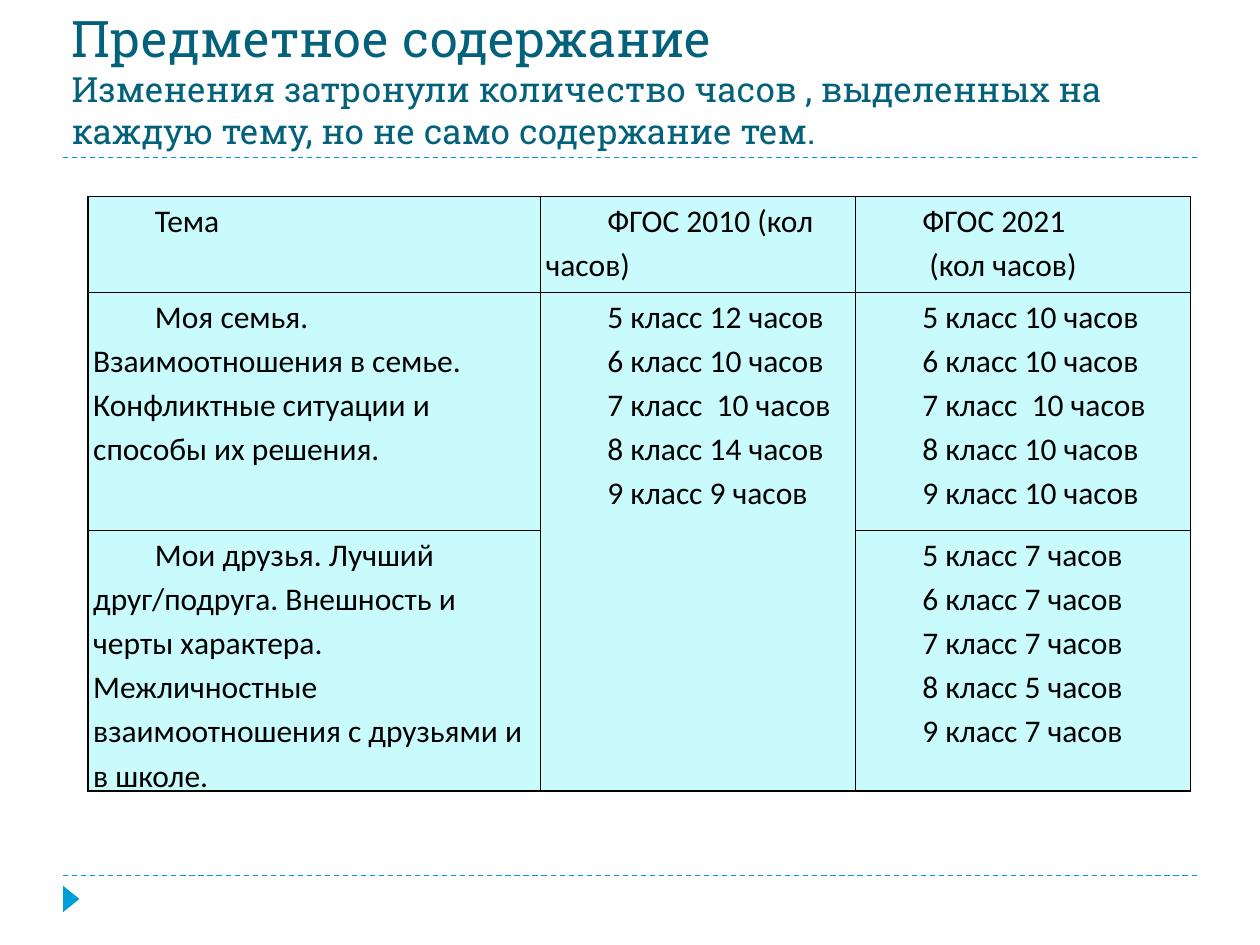
"""Builds a slide that compares lesson hours per topic under two standards."""
from dataclasses import dataclass

from lxml import etree
from pptx import Presentation, util as u
from pptx.dml.color import RGBColor
from pptx.enum import dml, shapes, text
from pptx.oxml import ns


@dataclass(frozen=True)
class Theme:
    """Holds the colours, fonts and type sizes."""
    title: RGBColor = RGBColor(0x04, 0x61, 0x7B)
    accent: RGBColor = RGBColor(0x00, 0x9D, 0xD9)
    cell: RGBColor = RGBColor(0xC9, 0xFA, 0xFC)
    ink: RGBColor = RGBColor(0, 0, 0)
    head: str = "Roboto Slab"
    body: str = "Calibri"
    big: float = 28.8
    mid: float = 19.8
    small: float = 18


THEME = Theme()
TITLE = "Предметное содержание"
NOTE = ("Изменения затронули количество часов , выделенных на каждую тему, "
        "но не само содержание тем.")
COLS = (3.59, 2.5, 2.66)
ROWS = (0.76, 1.89, 1.89)
FAMILY = "Моя семья. Взаимоотношения в семье. Конфликтные ситуации и способы их решения."
FRIENDS = ("Мои друзья. Лучший друг/подруга. Внешность и черты характера. "
           "Межличностные взаимоотношения с друзьями и в школе.")
CELLS = (
    (["Тема"], ["ФГОС 2010 (кол часов)"], ["ФГОС 2021", " (кол часов)"]),
    ([FAMILY],
     ["5 класс 12 часов", "6 класс 10 часов", "7 класс  10 часов",
      "8 класс 14 часов", "9 класс 9 часов"],
     ["5 класс 10 часов", "6 класс 10 часов", "7 класс  10 часов",
      "8 класс 10 часов", "9 класс 10 часов"]),
    ([FRIENDS], [],
     ["5 класс 7 часов", "6 класс 7 часов", "7 класс 7 часов",
      "8 класс 5 часов", "9 класс 7 часов"]),
)


def add_run(para, words, size, font, color):
    """Adds one styled run to a paragraph."""
    run = para.add_run()
    run.text = words
    run.font.size = u.Pt(size)
    run.font.name = font
    run.font.color.rgb = color


def add_rule(slide, y):
    """Draws a dashed rule across the slide."""
    rule = slide.shapes.add_connector(
        shapes.MSO_CONNECTOR.STRAIGHT,
        u.Inches(0.5), u.Inches(y), u.Inches(9.5), u.Inches(y))
    rule.line.color.rgb = THEME.accent
    rule.line.width = u.Pt(0.75)
    rule.line.dash_style = dml.MSO_LINE.DASH
    etree.SubElement(rule._element.spPr, ns.qn("a:effectLst"))


def add_mark(slide):
    """Draws the small triangle in the footer."""
    mark = slide.shapes.add_shape(
        shapes.MSO_SHAPE.ISOSCELES_TRIANGLE,
        u.Inches(0.46), u.Inches(7.07), u.Inches(0.21), u.Inches(0.13))
    mark.rotation = 90
    mark.shadow.inherit = False
    mark.fill.solid()
    mark.fill.fore_color.rgb = THEME.accent
    mark.line.fill.background()


def add_title(slide):
    """Adds the heading with its note below."""
    box = slide.shapes.add_textbox(
        u.Inches(0.47), u.Inches(0), u.Inches(9), u.Inches(1.25))
    frame = box.text_frame
    frame.word_wrap = True
    frame.vertical_anchor = text.MSO_ANCHOR.BOTTOM
    para = frame.paragraphs[0]
    add_run(para, TITLE, THEME.big, THEME.head, THEME.title)
    para.add_line_break()
    add_run(para, NOTE, THEME.mid, THEME.head, THEME.title)


def add_edges(cell):
    """Gives a cell a thin line on all four sides."""
    props = cell._tc.get_or_add_tcPr()
    for side in ("lnL", "lnR", "lnT", "lnB"):
        edge = etree.SubElement(props, ns.qn(f"a:{side}"), w=str(u.Pt(1)))
        fill = etree.SubElement(edge, ns.qn("a:solidFill"))
        etree.SubElement(fill, ns.qn("a:srgbClr"), val=str(THEME.ink))


def fill_cell(cell, lines):
    """Styles a cell and writes one paragraph per line."""
    add_edges(cell)
    cell.fill.solid()
    cell.fill.fore_color.rgb = THEME.cell
    cell.margin_left = cell.margin_right = u.Inches(0.04)
    cell.margin_top = cell.margin_bottom = 0
    frame = cell.text_frame
    for i, line in enumerate(lines):
        para = frame.add_paragraph() if i else frame.paragraphs[0]
        para.line_spacing = 1.15
        props = para._p.get_or_add_pPr()
        props.set("marL", "0")
        props.set("indent", str(u.Inches(0.49)))
        add_run(para, line, THEME.small, THEME.body, THEME.ink)


def add_grid(slide):
    """Adds the table of topics and hours."""
    grid = slide.shapes.add_table(
        len(ROWS), len(COLS), u.Inches(0.7), u.Inches(1.56),
        u.Inches(sum(COLS)), u.Inches(sum(ROWS))).table
    for col, width in zip(grid.columns, COLS):
        col.width = u.Inches(width)
    for row, height, cells in zip(grid.rows, ROWS, CELLS):
        row.height = u.Inches(height)
        for cell, lines in zip(row.cells, cells):
            fill_cell(cell, lines)
    grid.cell(1, 1).merge(grid.cell(2, 1))


def main():
    """Builds and saves the slide."""
    deck = Presentation()
    deck.slide_width, deck.slide_height = u.Inches(10), u.Inches(7.5)
    slide = deck.slides.add_slide(deck.slide_layouts[6])
    for y in (6.95, 1.25):
        add_rule(slide, y)
    add_mark(slide)
    add_title(slide)
    add_grid(slide)
    deck.save("out.pptx")


if __name__ == "__main__":
    main()
